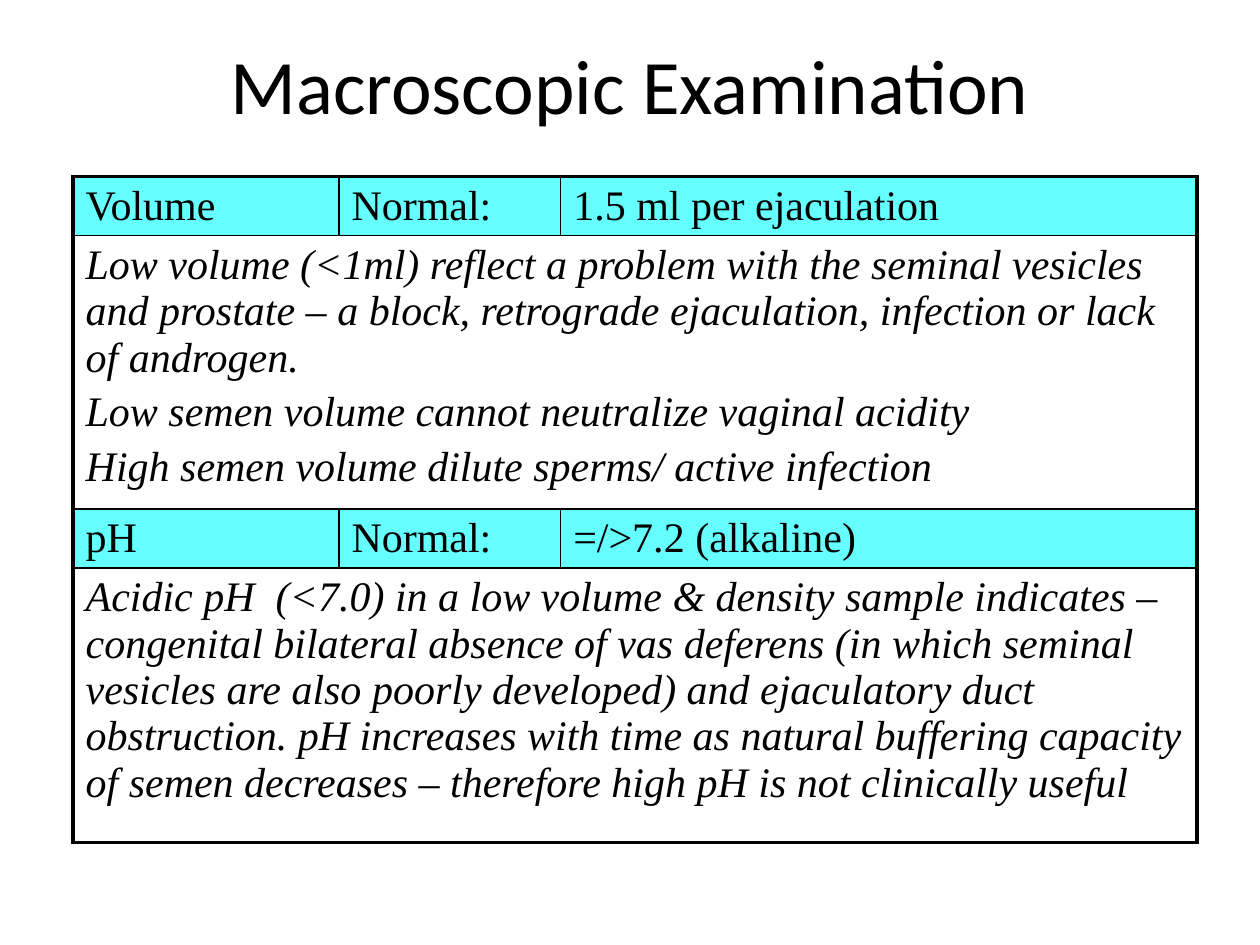
from dataclasses import dataclass

from lxml.etree import SubElement
from pptx import Presentation
from pptx.dml.color import RGBColor
from pptx.enum.text import MSO_ANCHOR, PP_ALIGN
from pptx.oxml.ns import qn
from pptx.util import Inches, Pt


@dataclass(frozen=True)
class Theme:
    """Colours, fonts and sizes of the slide."""
    ink: str = "000000"
    band: str = "66FFFF"
    title_font: str = "Calibri"
    body_font: str = "Times New Roman"
    title_size: float = 44
    body_size: float = 24
    paragraph_gap: float = 4.8
    frame: float = 2.25
    rule: float = 1


THEME = Theme()
COLUMN_WIDTHS = (2.11, 1.76, 5.05)
ROW_HEIGHTS = (0.42, 2.17, 0.41, 2.18)
TESTS = (
    (
        ("Volume", "Normal:", "1.5 ml per ejaculation"),
        (
            "Low volume (<1ml) reflect a problem with the seminal vesicles and "
            "prostate – a block, retrograde ejaculation, infection or lack of androgen.",
            "Low semen volume cannot neutralize vaginal acidity",
            "High semen volume dilute sperms/ active infection",
        ),
    ),
    (
        ("pH", "Normal:", "=/>7.2 (alkaline)"),
        (
            "Acidic pH  (<7.0) in a low volume & density sample indicates –"
            "congenital bilateral absence of vas deferens (in which seminal "
            "vesicles are also poorly developed) and ejaculatory duct obstruction. "
            "pH increases with time as natural buffering capacity of semen "
            "decreases – therefore high pH is not clinically useful",
        ),
    ),
)


def add_run(paragraph, text, font_name, size, italic=False):
    """Add one formatted run to a paragraph."""
    run = paragraph.add_run()
    run.text = text
    run.font.name = font_name
    run.font.size = Pt(size)
    run.font.italic = italic
    run.font.color.rgb = RGBColor.from_string(THEME.ink)


def set_title(slide, text):
    """Place and fill the title placeholder."""
    title = slide.shapes.title
    title.left, title.top = Inches(0.75), Inches(0.25)
    title.width, title.height = Inches(8.5), Inches(0.83)
    title.text_frame.vertical_anchor = MSO_ANCHOR.MIDDLE
    paragraph = title.text_frame.paragraphs[0]
    paragraph.alignment = PP_ALIGN.CENTER
    add_run(paragraph, text, THEME.title_font, THEME.title_size)


def fill_cell(cell, paragraphs, italic=False):
    """Write body paragraphs into a table cell."""
    frame = cell.text_frame
    for index, text in enumerate(paragraphs):
        paragraph = frame.add_paragraph() if index else frame.paragraphs[0]
        paragraph.space_before = Pt(THEME.paragraph_gap)
        add_run(paragraph, text, THEME.body_font, THEME.body_size, italic)


def set_borders(cell, outer_edges):
    """Draw thick lines on outer edges and thin ones elsewhere."""
    properties = cell._tc.get_or_add_tcPr()
    for side in "LRTB":
        width = THEME.frame if side in outer_edges else THEME.rule
        line = SubElement(properties, qn(f"a:ln{side}"), w=str(Pt(width)))
        SubElement(SubElement(line, qn("a:solidFill")), qn("a:srgbClr"), val=THEME.ink)


def outer_edges_of(row, column, span):
    """Return the sides of a cell that lie on the table frame."""
    on_frame = {
        "L": column == 0,
        "R": column + span == len(COLUMN_WIDTHS),
        "T": row == 0,
        "B": row == len(ROW_HEIGHTS) - 1,
    }
    return [side for side, outside in on_frame.items() if outside]


def add_heading_row(table, row, labels):
    """Fill a coloured row with a test and its normal value."""
    for column, label in enumerate(labels):
        cell = table.cell(row, column)
        set_borders(cell, outer_edges_of(row, column, 1))
        cell.fill.solid()
        cell.fill.fore_color.rgb = RGBColor.from_string(THEME.band)
        fill_cell(cell, [label])


def add_remarks_row(table, row, remarks):
    """Fill a full-width row with italic remarks."""
    last_column = len(COLUMN_WIDTHS) - 1
    cell = table.cell(row, 0)
    cell.merge(table.cell(row, last_column))
    set_borders(cell, outer_edges_of(row, 0, len(COLUMN_WIDTHS)))
    cell.fill.background()
    fill_cell(cell, remarks, italic=True)


def add_examination_table(slide):
    """Add the table of tests, normal values and remarks."""
    table = slide.shapes.add_table(
        len(ROW_HEIGHTS), len(COLUMN_WIDTHS), Inches(0.58), Inches(1.4),
        Inches(sum(COLUMN_WIDTHS)), Inches(sum(ROW_HEIGHTS)),
    ).table
    table.first_row = table.horz_banding = False
    for column, width in zip(table.columns, COLUMN_WIDTHS):
        column.width = Inches(width)
    for row, height in zip(table.rows, ROW_HEIGHTS):
        row.height = Inches(height)
    for index, (labels, remarks) in enumerate(TESTS):
        add_heading_row(table, 2 * index, labels)
        add_remarks_row(table, 2 * index + 1, remarks)


def main():
    """Build and save the slide."""
    presentation = Presentation()
    presentation.slide_width, presentation.slide_height = Inches(10), Inches(7.5)
    slide = presentation.slides.add_slide(presentation.slide_layouts[5])
    set_title(slide, "Macroscopic Examination")
    add_examination_table(slide)
    presentation.save("out.pptx")


if __name__ == "__main__":
    main()
